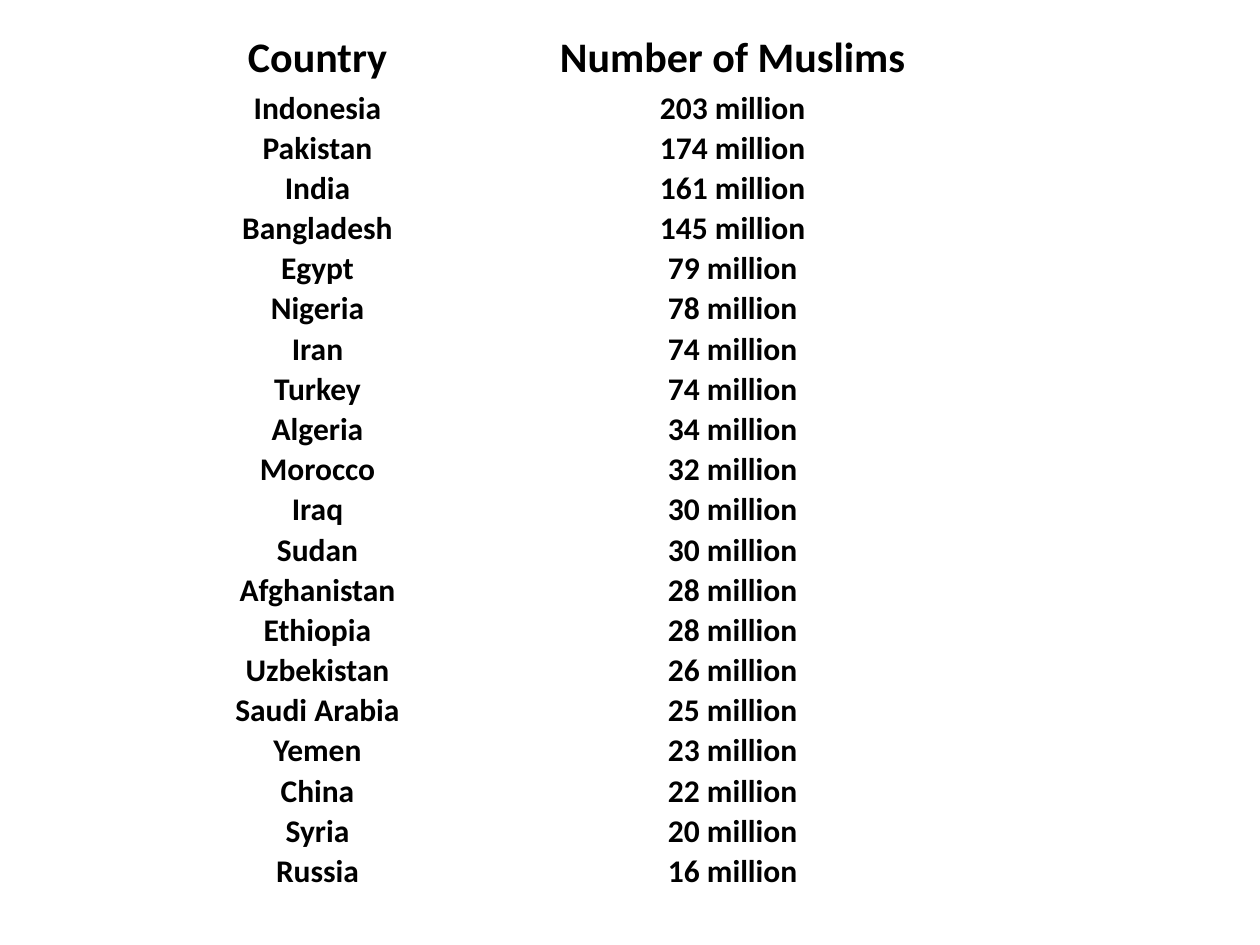
from dataclasses import dataclass

from pptx import Presentation
from pptx import util as u
from pptx.dml.color import RGBColor
from pptx.enum import text


@dataclass(frozen=True)
class Theme:
    font: str = "Calibri"
    ink: RGBColor = RGBColor(0, 0, 0)
    paper: RGBColor = RGBColor(255, 255, 255)
    header_size: int = 24
    body_size: int = 18
    inset: float = 0.5


THEME = Theme()
WIDTH, HEIGHT = u.Inches(10), u.Inches(7.5)
LEFT, TOP = u.Inches(1.75), u.Inches(0.25)
TABLE_HEIGHT = int(HEIGHT * 0.9)
COLUMNS = (u.Inches(1.54), u.Inches(5.05))
HEADER_ROW, BODY_ROW = u.Inches(0.45), u.Inches(0.24)
HEADINGS = ("Country", "Number of Muslims")
MILLIONS = {
    "Indonesia": 203,
    "Pakistan": 174,
    "India": 161,
    "Bangladesh": 145,
    "Egypt": 79,
    "Nigeria": 78,
    "Iran": 74,
    "Turkey": 74,
    "Algeria": 34,
    "Morocco": 32,
    "Iraq": 30,
    "Sudan": 30,
    "Afghanistan": 28,
    "Ethiopia": 28,
    "Uzbekistan": 26,
    "Saudi Arabia": 25,
    "Yemen": 23,
    "China": 22,
    "Syria": 20,
    "Russia": 16,
}


def fill_cell(cell, words, size):
    cell.fill.solid()
    cell.fill.fore_color.rgb = THEME.paper
    cell.margin_left = cell.margin_right = u.Pt(THEME.inset)
    cell.margin_top = cell.margin_bottom = u.Pt(THEME.inset)
    cell.vertical_anchor = text.MSO_ANCHOR.TOP
    cell.text_frame.text = words
    para = cell.text_frame.paragraphs[0]
    para.alignment = text.PP_ALIGN.CENTER
    for span in para.runs:
        span.font.name = THEME.font
        span.font.size = u.Pt(size)
        span.font.bold = True
        span.font.color.rgb = THEME.ink


def add_population_table(page):
    rows = [HEADINGS] + [(country, f"{count} million") for country, count in MILLIONS.items()]
    frame = page.shapes.add_table(len(rows), len(COLUMNS), LEFT, TOP, sum(COLUMNS), TABLE_HEIGHT)
    table = frame.table
    table.horz_banding = False
    for column, width in zip(table.columns, COLUMNS):
        column.width = width
    for index, (row, values) in enumerate(zip(table.rows, rows)):
        row.height = BODY_ROW if index else HEADER_ROW
        size = THEME.body_size if index else THEME.header_size
        for cell, words in zip(row.cells, values):
            fill_cell(cell, words, size)
    frame.height = TABLE_HEIGHT


def main():
    deck = Presentation()
    deck.slide_width, deck.slide_height = WIDTH, HEIGHT
    page = deck.slides.add_slide(deck.slide_layouts.get_by_name("Blank"))
    add_population_table(page)
    deck.save("out.pptx")


if __name__ == "__main__":
    main()
